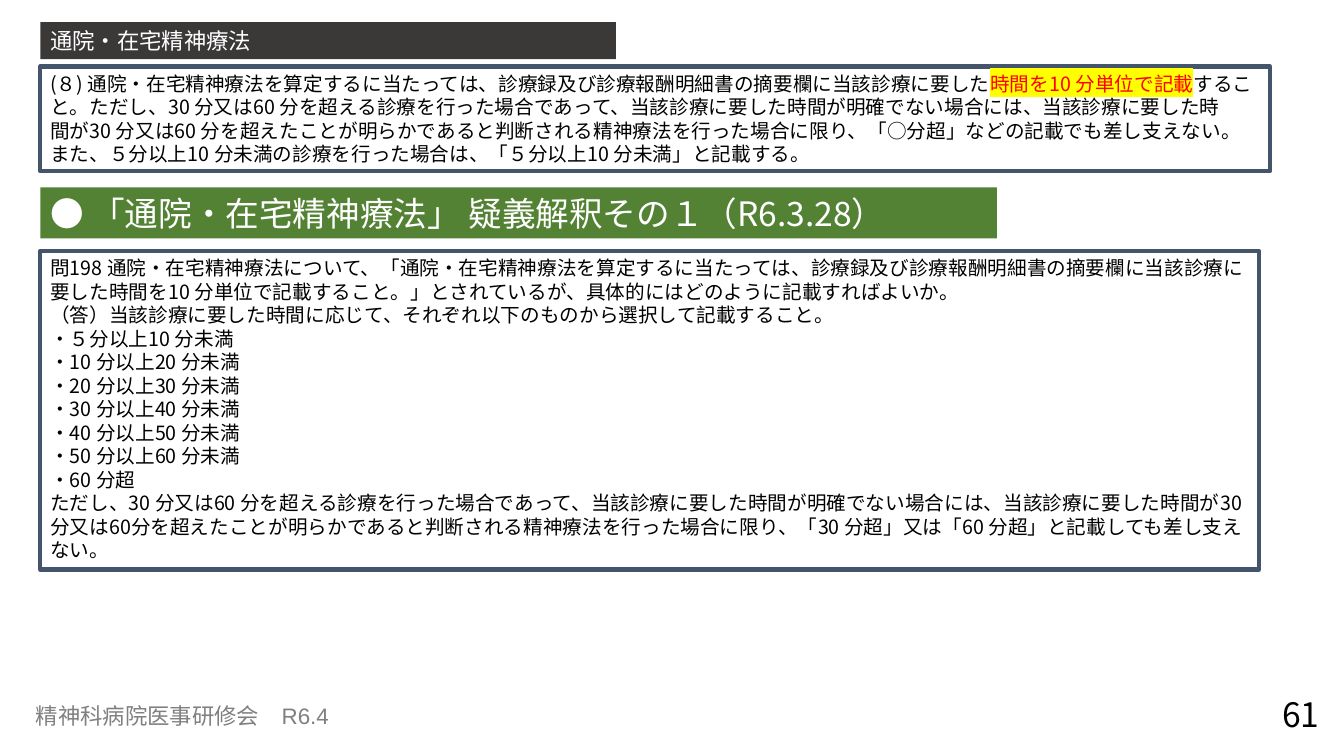
from lxml import etree
from pptx import Presentation
from pptx import util as u
from pptx.dml.color import RGBColor
from pptx.enum import shapes, text
from pptx.oxml import ns

WHITE = RGBColor(0xFF, 0xFF, 0xFF)
BLACK = RGBColor(0, 0, 0)
RED = RGBColor(0xFF, 0, 0)
YELLOW = RGBColor(0xFF, 0xFF, 0)
GREEN = RGBColor(0x54, 0x82, 0x35)
CHARCOAL = RGBColor(0x3B, 0x38, 0x38)
NAVY = RGBColor(0x44, 0x54, 0x6A)
GRAY = RGBColor(0x80, 0x80, 0x80)
JAPANESE = "Noto Sans CJK JP"

RULE = [
    [
        ("(８) 通院・在宅精神療法を算定するに当たっては、診療録及び診療報酬明細書の摘要欄に当該診療に要した", BLACK, None),
        ("時間を10 分単位で記載", RED, YELLOW),
        ("すること。ただし、30 分又は60 分を超える診療を行った場合であって、"
         "当該診療に要した時間が明確でない場合には、当該診療に要した時", BLACK, None),
    ],
    "間が30 分又は60 分を超えたことが明らかであると判断される精神療法を行った場合に限り、"
    "「○分超」などの記載でも差し支えない。また、５分以上10 分未満の診療を行った場合は、"
    "「５分以上10 分未満」と記載する。",
]
ANSWER = [
    "問198 通院・在宅精神療法について、「通院・在宅精神療法を算定するに当たっては、"
    "診療録及び診療報酬明細書の摘要欄に当該診療に要した時間を10 分単位で記載すること。」"
    "とされているが、具体的にはどのように記載すればよいか。",
    "（答）当該診療に要した時間に応じて、それぞれ以下のものから選択して記載すること。",
    "・５分以上10 分未満",
    *[f"・{minutes} 分以上{minutes + 10} 分未満" for minutes in range(10, 60, 10)],
    "・60 分超",
    "ただし、30 分又は60 分を超える診療を行った場合であって、当該診療に要した時間が明確でない場合には、"
    "当該診療に要した時間が30 分又は60分を超えたことが明らかであると判断される精神療法を行った場合に限り、"
    "「30 分超」又は「60 分超」と記載しても差し支えない。",
]


class SlideBuilder:
    """Hold the text style and the slide, and add its bars, frames and labels."""

    def __init__(self, slide):
        self.slide = slide
        self.frame_format = {
            "word_wrap": True,
            "auto_size": text.MSO_AUTO_SIZE.NONE,
            "margin_left": u.Pt(7.2),
            "margin_right": u.Pt(7.2),
            "margin_top": u.Pt(3.6),
            "margin_bottom": u.Pt(3.6),
        }

    def fill_text(self, shape, paragraphs, size, color, latin=JAPANESE,
                  align=text.PP_ALIGN.LEFT, anchor=text.MSO_ANCHOR.TOP):
        frame = shape.text_frame
        for name, value in {**self.frame_format, "vertical_anchor": anchor}.items():
            setattr(frame, name, value)
        for index, content in enumerate(paragraphs):
            paragraph = frame.add_paragraph() if index else frame.paragraphs[0]
            paragraph.alignment = align
            paragraph.line_spacing = u.Pt(size * 1.2)
            runs = [(content, color, None)] if isinstance(content, str) else content
            for words, run_color, highlight in runs:
                self.add_run(paragraph, words, size, run_color, highlight, latin)

    def add_run(self, paragraph, words, size, color, highlight, latin):
        run = paragraph.add_run()
        run.text = words
        run.font.size = u.Pt(size)
        run.font.color.rgb = color
        properties = run._r.get_or_add_rPr()
        if highlight:
            marker = etree.SubElement(properties, ns.qn("a:highlight"))
            etree.SubElement(marker, ns.qn("a:srgbClr"), val=str(highlight))
        run.font.name = latin
        etree.SubElement(properties, ns.qn("a:ea"), typeface=JAPANESE)

    def rectangle(self, box):
        shape = self.slide.shapes.add_shape(
            shapes.MSO_SHAPE.RECTANGLE, *[u.Pt(length) for length in box])
        shape.shadow.inherit = False
        return shape

    def bar(self, box, words, size, fill):
        shape = self.rectangle(box)
        shape.fill.solid()
        shape.fill.fore_color.rgb = fill
        shape.line.fill.background()
        self.fill_text(shape, [words], size, WHITE)

    def frame(self, box, paragraphs):
        shape = self.rectangle(box)
        shape.fill.background()
        shape.line.width = u.Pt(3)
        shape.line.color.rgb = NAVY
        etree.SubElement(shape.get_or_add_ln(), ns.qn("a:round"))
        self.fill_text(shape, paragraphs, 14, BLACK)

    def label(self, box, words, size, color, **style):
        shape = self.slide.shapes.add_textbox(*[u.Pt(length) for length in box])
        self.fill_text(shape, [words], size, color, **style)


def main():
    presentation = Presentation()
    presentation.slide_width = u.Pt(960)
    presentation.slide_height = u.Pt(540)
    builder = SlideBuilder(presentation.slides.add_slide(presentation.slide_layouts[6]))
    builder.label((7.2, 498.2, 246.2, 26.6), "精神科病院医事研修会　R6.4", 16, GRAY,
                  latin="Arial", align=text.PP_ALIGN.CENTER)
    builder.label((907.2, 496.1, 42.5, 28.1), "61", 24, BLACK,
                  align=text.PP_ALIGN.RIGHT, anchor=text.MSO_ANCHOR.MIDDLE)
    builder.bar((28.8, 133.9, 683.3, 36.4), "● 「通院・在宅精神療法」 疑義解釈その１（R6.3.28）", 24, GREEN)
    builder.frame((28.8, 179.3, 870.5, 227.5), ANSWER)
    builder.frame((28.8, 47.5, 878.4, 74.9), RULE)
    builder.bar((28.8, 15.8, 411.1, 26.6), "通院・在宅精神療法", 16, CHARCOAL)
    presentation.save("out.pptx")


if __name__ == "__main__":
    main()
